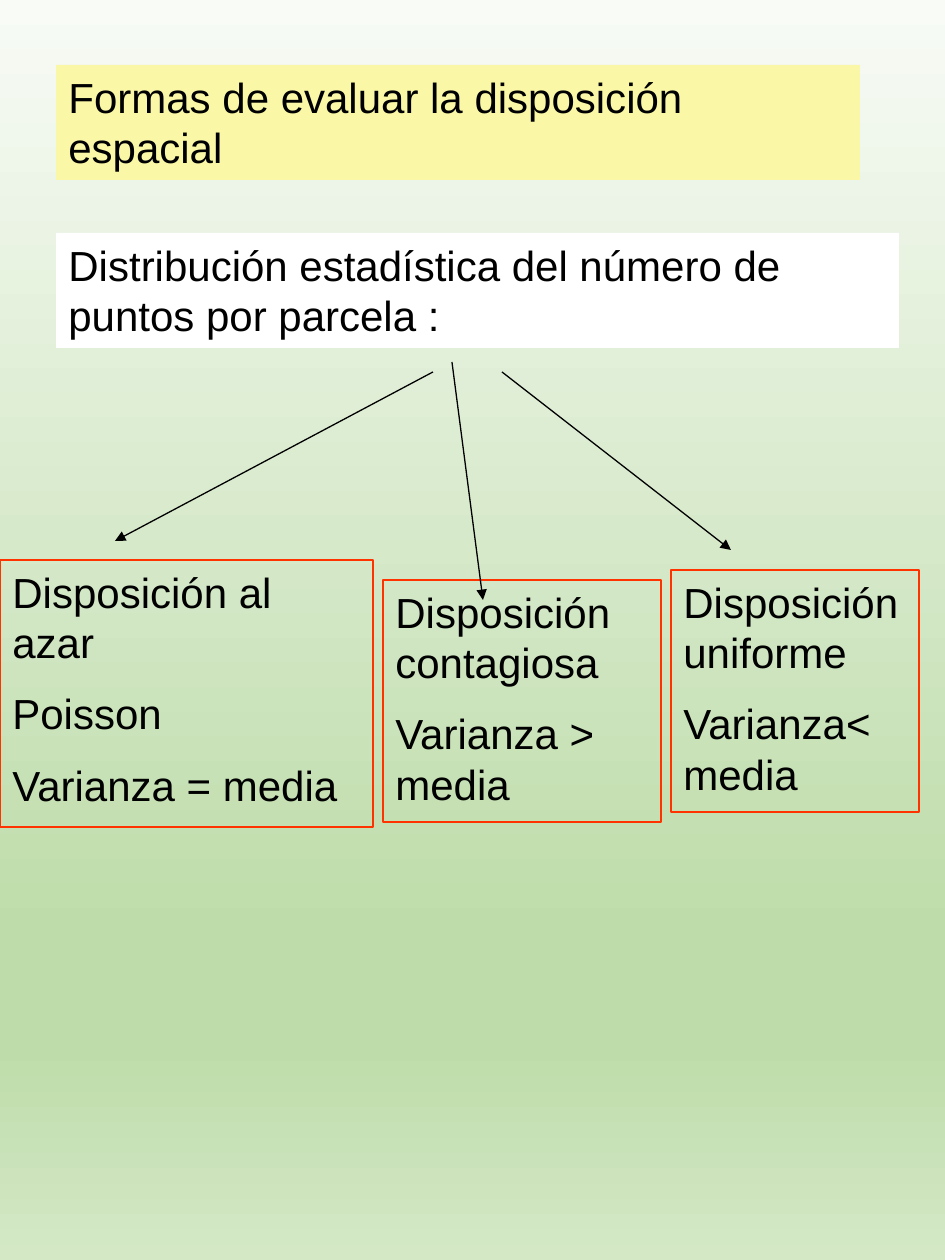
from lxml.etree import SubElement
from pptx import Presentation
from pptx.dml.color import RGBColor
from pptx.enum.shapes import MSO_CONNECTOR
from pptx.enum.text import MSO_AUTO_SIZE
from pptx.oxml.ns import qn
from pptx.util import Inches, Pt

PX = Inches(1) // 126
BLACK = RGBColor(0x00, 0x00, 0x00)
WHITE = RGBColor(0xFF, 0xFF, 0xFF)
YELLOW = RGBColor(0xFA, 0xF8, 0xA6)
RED = RGBColor(0xFF, 0x33, 0x00)
PALE = RGBColor(0xF8, 0xFB, 0xF6)
GREEN = RGBColor(0xBE, 0xDC, 0xAA)
LIGHT_GREEN = RGBColor(0xD4, 0xE8, 0xC6)

BACKGROUND = [(0, PALE), (74, GREEN), (83, GREEN), (100, LIGHT_GREEN)]
BOXES = [
    ((56, 65, 804, 115), YELLOW, None,
     ["Formas de evaluar la disposición espacial"]),
    ((56, 233, 843, 115), WHITE, None,
     ["Distribución estadística del número de puntos por parcela :"]),
    ((0, 560, 373, 267), None, RED,
     ["Disposición al azar", "Poisson", "Varianza = media"]),
    ((383, 580, 278, 242), None, RED,
     ["Disposición contagiosa", "Varianza > media"]),
    ((671, 570, 248, 242), None, RED,
     ["Disposición uniforme", "Varianza< media"]),
]
ARROWS = [
    (433, 372, 115, 541),
    (452, 362, 483, 600),
    (502, 372, 731, 550),
]


def paint_background(s, stops):
    fill = s.background.fill
    fill.gradient()
    fill.gradient_angle = 270
    gs_list = next(s._element.iter(qn("a:gsLst")))
    for gs in list(gs_list):
        gs_list.remove(gs)
    for percent, color in stops:
        gs = SubElement(gs_list, qn("a:gs"), pos=str(percent * 1000))
        SubElement(gs, qn("a:srgbClr"), val=str(color))


def add_box(s, place, fill, line, texts):
    sp = s.shapes.add_textbox(*(v * PX for v in place))
    if fill is not None:
        sp.fill.solid()
        sp.fill.fore_color.rgb = fill
    if line is not None:
        sp.line.color.rgb = line
        sp.line.width = Pt(0.75)
    tf = sp.text_frame
    tf.word_wrap = True
    tf.auto_size = MSO_AUTO_SIZE.SHAPE_TO_FIT_TEXT
    tf.text = "\n".join(texts)
    for p in tf.paragraphs:
        p.space_before = Pt(12)
        p.font.name = "Arial"
        p.font.size = Pt(24)
        p.font.color.rgb = BLACK


def add_arrow(s, ends):
    line = s.shapes.add_connector(MSO_CONNECTOR.STRAIGHT, *(v * PX for v in ends))
    line.line.color.rgb = BLACK
    line.line.width = Pt(0.75)
    SubElement(line.line._get_or_add_ln(), qn("a:tailEnd"), type="triangle")
    SubElement(line._element.spPr, qn("a:effectLst"))


def main():
    prs = Presentation()
    prs.slide_width, prs.slide_height = 945 * PX, 1260 * PX
    s = prs.slides.add_slide(prs.slide_layouts[6])
    paint_background(s, BACKGROUND)
    for box in BOXES:
        add_box(s, *box)
    for ends in ARROWS:
        add_arrow(s, ends)
    prs.save("out.pptx")


if __name__ == "__main__":
    main()
